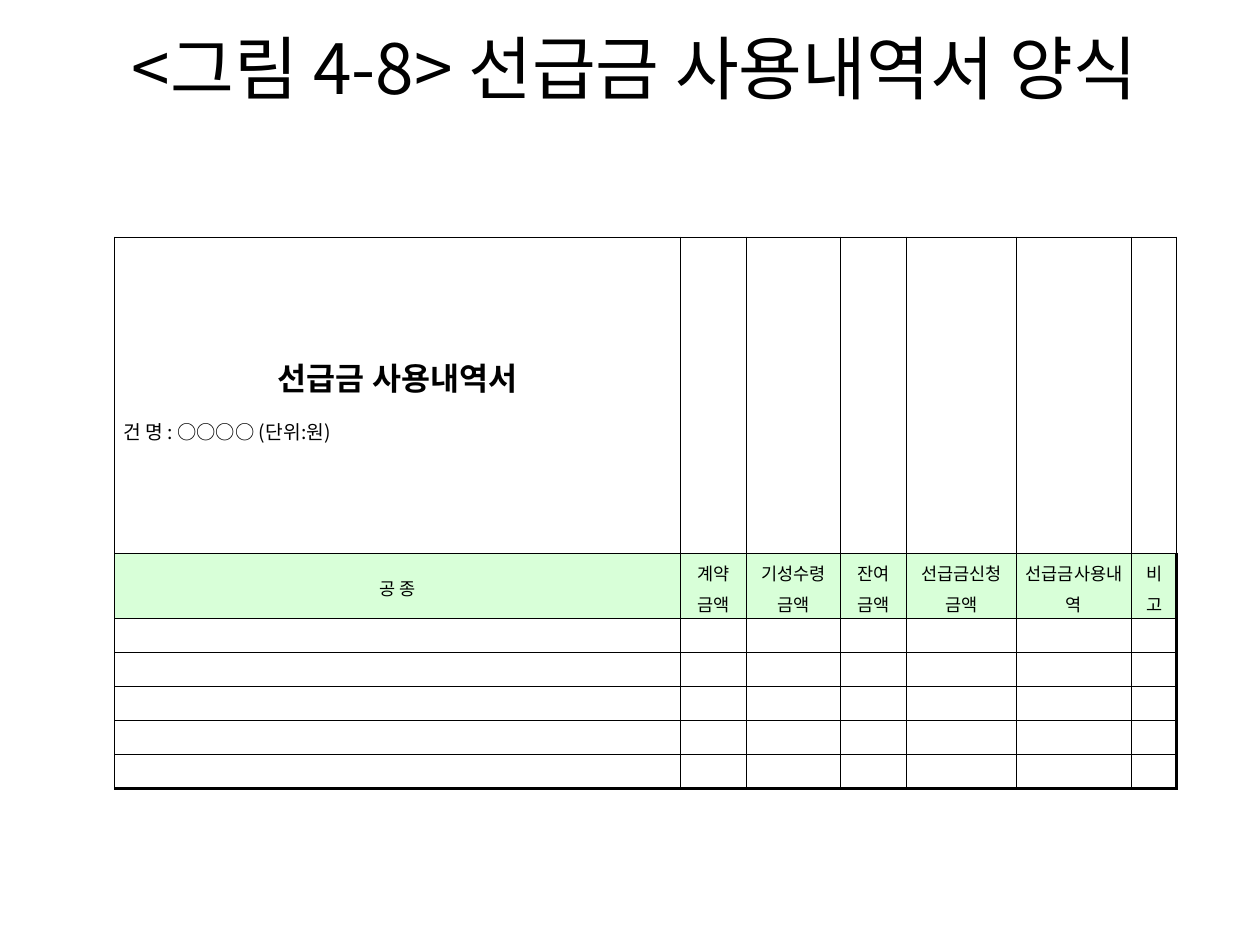
from lxml import etree
from pptx import Presentation
from pptx.dml.color import RGBColor
from pptx.enum.text import MSO_ANCHOR, PP_ALIGN
from pptx.oxml.ns import qn
from pptx.util import Inches, Pt

TOP, MIDDLE = MSO_ANCHOR.TOP, MSO_ANCHOR.MIDDLE
CENTER, JUSTIFY = PP_ALIGN.CENTER, PP_ALIGN.JUSTIFY
FONT = "Noto Sans CJK KR"
BLACK, GREEN = "000000", "D8FFD8"
THIN, THICK = 0.28, 1.7
COLUMN_WIDTHS = [4.49, 0.52, 0.75, 0.52, 0.88, 0.91, 0.36]
ROW_HEIGHTS = [2.51, 0.52] + [0.27] * 5
HEADINGS = ["공 종", "계약금액", "기성수령금액", "잔여금액",
            "선급금신청금액", "선급금사용내역", "비 고"]


def color(value):
    """Turn a hex string into a colour."""
    return RGBColor.from_string(value)


def set_values(target, values):
    """Set attributes of an object from a dict."""
    for name, value in values.items():
        setattr(target, name, value)


def write(para, text, size, bold=False, align=CENTER, spacing=1.2):
    """Write one formatted run into a paragraph."""
    set_values(para, {"alignment": align, "line_spacing": spacing})
    span = para.add_run()
    span.text = text
    set_values(span.font, {"name": FONT, "size": Pt(size), "bold": bold})
    span.font.color.rgb = color(BLACK)
    east_asian = etree.SubElement(span.font._element, qn("a:ea"))
    east_asian.set("typeface", FONT)


def add_borders(cell, widths):
    """Draw the cell's left, right, top and bottom borders."""
    properties = cell._tc.get_or_add_tcPr()
    for side, width in zip("LRTB", widths):
        line = etree.SubElement(properties, qn(f"a:ln{side}"), w=str(Pt(width)))
        fill = etree.SubElement(line, qn("a:solidFill"))
        etree.SubElement(fill, qn("a:srgbClr"), val=BLACK)


def format_cell(cell, is_heading, widths):
    """Give a cell its margins, borders, fill and small empty line."""
    set_values(cell, {
        "vertical_anchor": MIDDLE,
        "margin_left": Inches(0.07), "margin_right": Inches(0.07),
        "margin_top": Inches(0.02), "margin_bottom": Inches(0.02),
    })
    add_borders(cell, widths)
    if is_heading:
        cell.fill.solid()
        cell.fill.fore_color.rgb = color(GREEN)
    else:
        cell.fill.background()
    para = cell.text_frame.paragraphs[0]
    etree.SubElement(para._p, qn("a:endParaRPr"), sz="1000")


def place_title(page, left, top, width, height):
    """Place the slide title in the given box."""
    title = page.shapes.title
    set_values(title, {"left": left, "top": top, "width": width, "height": height})
    set_values(title.text_frame, {"vertical_anchor": TOP, "margin_top": 0, "word_wrap": True})
    write(title.text_frame.paragraphs[0], "<그림 4-8> 선급금 사용내역서 양식", 39.6, spacing=0.85)


def place_form(page, left, top, width, height):
    """Place the advance payment form in the given box."""
    row_count, column_count = len(ROW_HEIGHTS), len(COLUMN_WIDTHS)
    form = page.shapes.add_table(row_count, column_count, left, top, width, height).table
    set_values(form, {"first_row": False, "horz_banding": False})
    for column, share in zip(form.columns, COLUMN_WIDTHS):
        column.width = int(width * share / sum(COLUMN_WIDTHS))
    for row, share in zip(form.rows, ROW_HEIGHTS):
        row.height = int(height * share / sum(ROW_HEIGHTS))
    for row in range(row_count):
        for column in range(column_count):
            right = THICK if row > 0 and column == column_count - 1 else THIN
            bottom = THICK if row == row_count - 1 else THIN
            format_cell(form.cell(row, column), row == 1, (THIN, right, THIN, bottom))
    frame = form.cell(0, 0).text_frame
    write(frame.paragraphs[0], "선급금 사용내역서", 18, bold=True)
    write(frame.add_paragraph(), "건 명 : ○○○○ (단위:원)", 11, align=JUSTIFY, spacing=1.65)
    for column, heading in enumerate(HEADINGS):
        write(form.cell(1, column).text_frame.paragraphs[0], heading, 10)


def main():
    """Build and save the deck."""
    deck = Presentation()
    set_values(deck, {"slide_width": Inches(10), "slide_height": Inches(7.5)})
    page = deck.slides.add_slide(deck.slide_layouts[5])
    place_title(page, Inches(0.35), Inches(0.3), Inches(9.37), Inches(1.25))
    place_form(page, Inches(0.91), Inches(1.88), Inches(8.43), Inches(4.38))
    deck.save("out.pptx")


if __name__ == "__main__":
    main()
